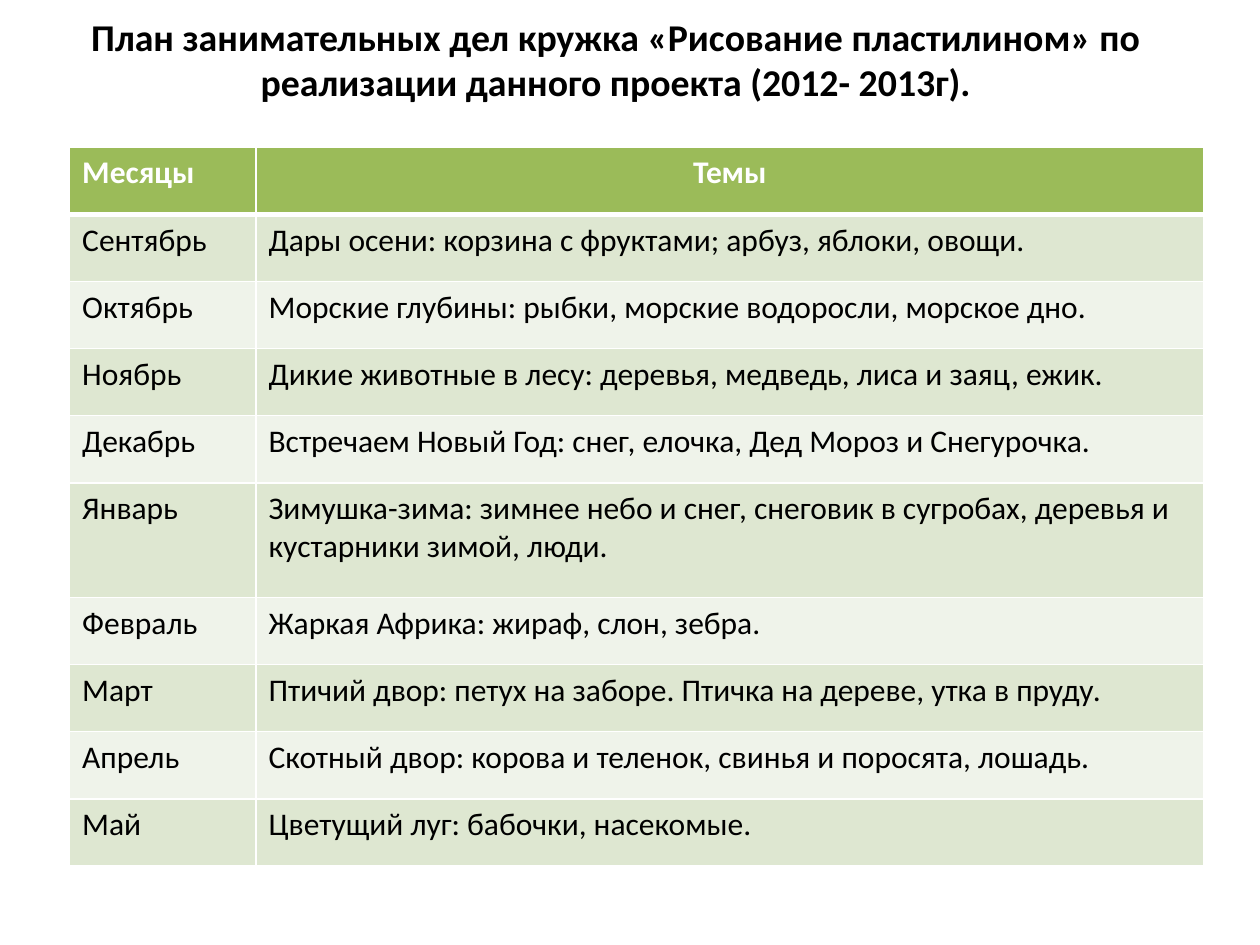
import pptx
import pptx.dml.color
import pptx.enum.text
import pptx.oxml
import pptx.oxml.ns
import pptx.util

Pt = pptx.util.Pt
RGBColor = pptx.dml.color.RGBColor
PP_ALIGN = pptx.enum.text.PP_ALIGN

TITLE = ("План занимательных дел кружка «Рисование пластилином» "
         "по реализации данного проекта (2012- 2013г).")
PLAN = [
    ("Месяцы", "Темы"),
    ("Сентябрь", "Дары осени: корзина с фруктами; арбуз, яблоки, овощи."),
    ("Октябрь", "Морские глубины: рыбки, морские водоросли, морское дно."),
    ("Ноябрь", "Дикие животные в лесу: деревья, медведь, лиса и заяц, ежик."),
    ("Декабрь", "Встречаем Новый Год: снег, елочка, Дед Мороз и Снегурочка."),
    ("Январь", "Зимушка-зима: зимнее небо и снег, снеговик в сугробах, "
               "деревья и кустарники зимой, люди."),
    ("Февраль", "Жаркая Африка: жираф, слон, зебра."),
    ("Март", "Птичий двор: петух на заборе. Птичка на дереве, утка в пруду."),
    ("Апрель", "Скотный двор: корова и теленок, свинья и поросята, лошадь."),
    ("Май", "Цветущий луг: бабочки, насекомые."),
]

FONT = "Calibri"
BLACK = RGBColor(0x00, 0x00, 0x00)
WHITE = RGBColor(0xFF, 0xFF, 0xFF)
HEADER_GREEN = RGBColor(0x9B, 0xBB, 0x59)
BANDS = (RGBColor(0xDE, 0xE7, 0xD1), RGBColor(0xEF, 0xF3, 0xEA))

COLUMN_WIDTHS = (106.5, 541.5)
ROW_HEIGHT, TWO_LINE_HEIGHT = 38.3, 65.7
TWO_LINE_MONTH = "Январь"
GRID_LINE, HEADER_LINE = 1, 3


def write(paragraph, text, size, color, bold, align):
    paragraph.alignment = align
    run = paragraph.add_run()
    run.text = text
    run.font.name = FONT
    run.font.size = Pt(size)
    run.font.bold = bold
    run.font.color.rgb = color


def add_borders(cell, top, bottom):
    """Draw white cell borders; must precede the fill in the cell's XML."""
    widths = {"lnL": GRID_LINE, "lnR": GRID_LINE, "lnT": top, "lnB": bottom}
    for side, width in widths.items():
        cell._tc.get_or_add_tcPr().append(pptx.oxml.parse_xml(
            f'<a:{side} {pptx.oxml.ns.nsdecls("a")} w="{Pt(width)}">'
            f'<a:solidFill><a:srgbClr val="{WHITE}"/></a:solidFill></a:{side}>'))


def add_title(slide):
    frame = slide.shapes.add_textbox(Pt(28), Pt(0), Pt(648), Pt(67)).text_frame
    frame.word_wrap = True
    frame.vertical_anchor = pptx.enum.text.MSO_ANCHOR.MIDDLE
    write(frame.paragraphs[0], TITLE, 21.6, BLACK, True, PP_ALIGN.CENTER)


def add_plan(slide):
    heights = [TWO_LINE_HEIGHT if month == TWO_LINE_MONTH else ROW_HEIGHT
               for month, _ in PLAN]
    table = slide.shapes.add_table(
        len(PLAN), len(COLUMN_WIDTHS), Pt(39.8), Pt(84.4),
        Pt(sum(COLUMN_WIDTHS)), Pt(sum(heights))).table
    for column, width in zip(table.columns, COLUMN_WIDTHS):
        column.width = Pt(width)
    for r, (entries, height) in enumerate(zip(PLAN, heights)):
        table.rows[r].height = Pt(height)
        header = r == 0
        for c, text in enumerate(entries):
            cell = table.cell(r, c)
            add_borders(cell, top=HEADER_LINE if r == 1 else GRID_LINE,
                        bottom=HEADER_LINE if header else GRID_LINE)
            cell.fill.solid()
            cell.fill.fore_color.rgb = HEADER_GREEN if header else BANDS[(r - 1) % 2]
            write(cell.text_frame.paragraphs[0], text, 18,
                  WHITE if header else BLACK, header,
                  PP_ALIGN.CENTER if header and c == 1 else PP_ALIGN.LEFT)


def main():
    deck = pptx.Presentation()
    deck.slide_width, deck.slide_height = Pt(720), Pt(540)
    slide = deck.slides.add_slide(deck.slide_layouts[6])
    add_title(slide)
    add_plan(slide)
    deck.save("out.pptx")


if __name__ == "__main__":
    main()
